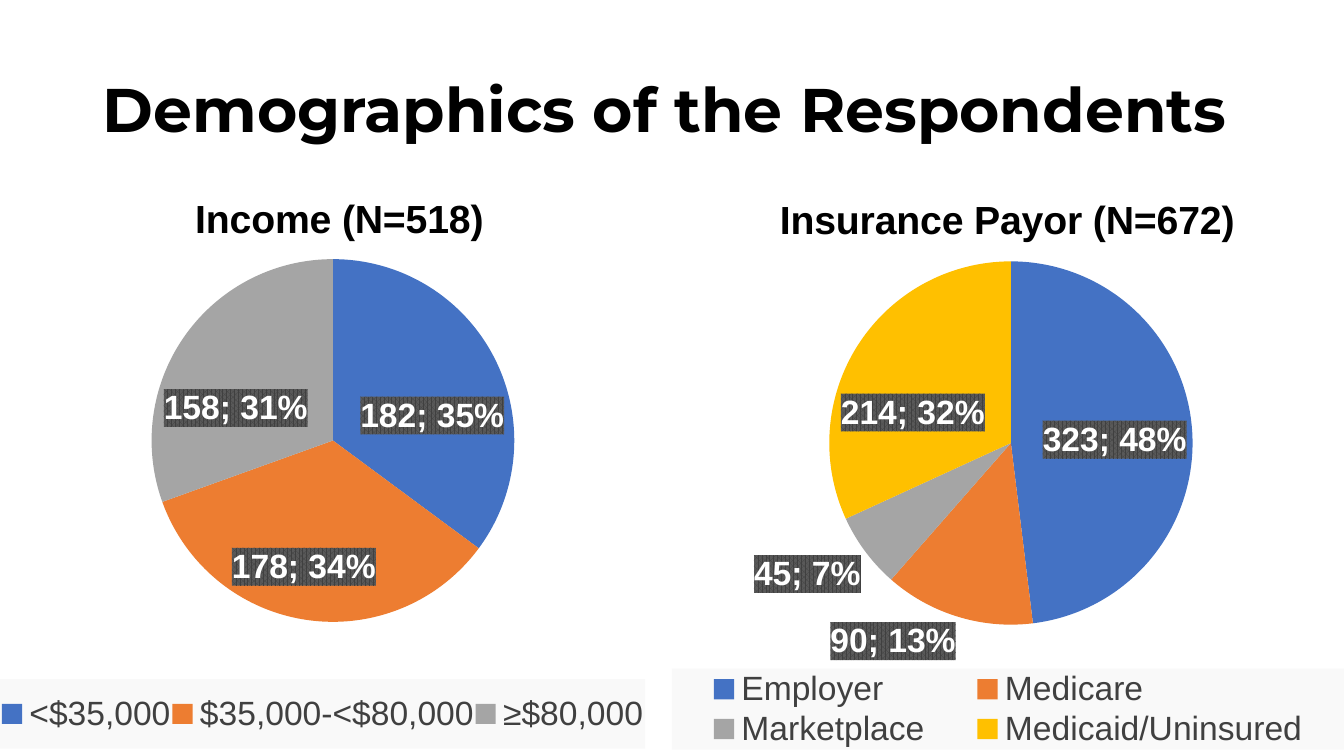
from lxml import etree
from pptx import Presentation
from pptx import util as u
from pptx.chart.data import CategoryChartData
from pptx.dml.color import RGBColor
from pptx.enum import chart as charts, text
from pptx.oxml import parse_xml
from pptx.oxml.ns import nsdecls, qn

BLACK = RGBColor(0x00, 0x00, 0x00)
WHITE = RGBColor(0xFF, 0xFF, 0xFF)
LEGEND_TEXT = RGBColor(0x40, 0x40, 0x40)
BLUE = RGBColor(0x44, 0x72, 0xC4)
ORANGE = RGBColor(0xED, 0x7D, 0x31)
GRAY = RGBColor(0xA5, 0xA5, 0xA5)
GOLD = RGBColor(0xFF, 0xC0, 0x00)

LABEL_FILL = (
    f'<c:spPr {nsdecls("c", "a")}><a:pattFill prst="pct75">'
    '<a:fgClr><a:srgbClr val="404040"/></a:fgClr>'
    '<a:bgClr><a:srgbClr val="595959"/></a:bgClr></a:pattFill></c:spPr>'
)
LEGEND_FILL = (
    f'<c:spPr {nsdecls("c", "a")}><a:solidFill>'
    '<a:srgbClr val="F9F9F9"/></a:solidFill></c:spPr>'
)


def set_layout(element, index, inner=False, **fractions):
    """Place a chart part by fractions (x, y, w, h) of the chart."""
    for old in element.findall(qn("c:layout")):
        element.remove(old)
    layout = parse_xml(f'<c:layout {nsdecls("c")}><c:manualLayout/></c:layout>')
    settings = {"layoutTarget": "inner"} if inner else {}
    settings |= {"xMode": "edge", "yMode": "edge"} | fractions
    for name, value in settings.items():
        etree.SubElement(layout[0], qn(f"c:{name}")).set("val", str(value))
    element.insert(index, layout)


class SlideBuilder:
    PX = 9525  # 96 px to the inch
    PALETTE = (BLUE, ORANGE, GRAY, GOLD)
    HEADING_FONT = "Montserrat"
    CHART_FONT = "Arial"

    def __init__(self, presentation):
        title_only = presentation.slide_layouts[5]
        self.slide = presentation.slides.add_slide(title_only)

    def box(self, *lengths):
        return [u.Emu(length * self.PX) for length in lengths]

    def style(self, font, name, size, color, bold=False):
        font.name, font.size, font.bold = name, u.Pt(size), bold
        font.color.rgb = color

    def title(self, words, box):
        shape = self.slide.shapes.title
        shape.left, shape.top, shape.width, shape.height = self.box(*box)
        frame = shape.text_frame
        frame.text = words
        frame.word_wrap = True
        frame.auto_size = text.MSO_AUTO_SIZE.NONE
        frame.vertical_anchor = text.MSO_ANCHOR.MIDDLE
        paragraph = frame.paragraphs[0]
        paragraph.alignment = text.PP_ALIGN.LEFT
        paragraph.line_spacing = 0.9
        self.style(paragraph.font, self.HEADING_FONT, 44, BLACK, bold=True)

    def pie(self, heading, values, box, heading_at, plot_at, legend_at):
        data = CategoryChartData()
        data.categories = list(values)
        data.add_series("Series 1", list(values.values()))
        chart = self.slide.shapes.add_chart(
            charts.XL_CHART_TYPE.PIE, *self.box(*box), data).chart
        self.style(chart.font, self.CHART_FONT, 10, BLACK)

        # Heading and plot area
        chart.has_title = True
        chart.chart_title.include_in_layout = False
        frame = chart.chart_title.text_frame
        frame.text = heading
        self.style(frame.paragraphs[0].font, self.CHART_FONT, 28, BLACK, bold=True)
        set_layout(chart.chart_title._element, 1, **heading_at)
        set_layout(chart._chartSpace.chart.plotArea, 0, inner=True, **plot_at)

        # Slices
        chart.plots[0].vary_by_categories = True
        series = chart.plots[0].series[0]
        for index, color in zip(range(len(values)), self.PALETTE):
            fill = series.points[index].format.fill
            fill.solid()
            fill.fore_color.rgb = color

        # Labels on a patterned ground
        labels = series.data_labels
        self.style(labels.font, self.CHART_FONT, 24, WHITE, bold=True)
        labels.show_value = labels.show_percentage = True
        labels.position = charts.XL_LABEL_POSITION.BEST_FIT
        element = labels._element
        element.find(qn("c:txPr")).addprevious(parse_xml(LABEL_FILL))
        separator = etree.Element(qn("c:separator"))
        separator.text = "; "
        element.find(qn("c:showBubbleSize")).addnext(separator)

        # Legend
        chart.has_legend = True
        legend = chart.legend
        legend.position = charts.XL_LEGEND_POSITION.BOTTOM
        legend.include_in_layout = False
        self.style(legend.font, self.CHART_FONT, 24, LEGEND_TEXT)
        set_layout(legend._element, 1, **legend_at)
        legend._element.find(qn("c:txPr")).addprevious(parse_xml(LEGEND_FILL))


def main():
    presentation = Presentation()
    presentation.slide_width = u.Emu(1280 * SlideBuilder.PX)
    presentation.slide_height = u.Emu(720 * SlideBuilder.PX)
    builder = SlideBuilder(presentation)

    builder.title("Demographics of the Respondents", (88, 38, 1130, 139))
    builder.pie(
        "Income (N=518)",
        {"<$35,000": 182, "$35,000-<$80,000": 178, "≥$80,000": 158},
        box=(0, 162, 640, 551),
        heading_at=dict(x=0.28, y=0.03),
        plot_at=dict(x=0.225, y=0.154, w=0.541, h=0.627),
        legend_at=dict(x=0, y=0.88, w=0.96, h=0.12),
    )
    builder.pie(
        "Insurance Payor (N=672)",
        {"Employer": 323, "Medicare": 90, "Marketplace": 45,
         "Medicaid/Uninsured": 214},
        box=(640, 163, 640, 551),
        heading_at=dict(x=0.15, y=0.03),
        plot_at=dict(x=0.234, y=0.156, w=0.541, h=0.628),
        legend_at=dict(x=0, y=0.86, w=1, h=0.14),
    )
    presentation.save("out.pptx")


if __name__ == "__main__":
    main()
